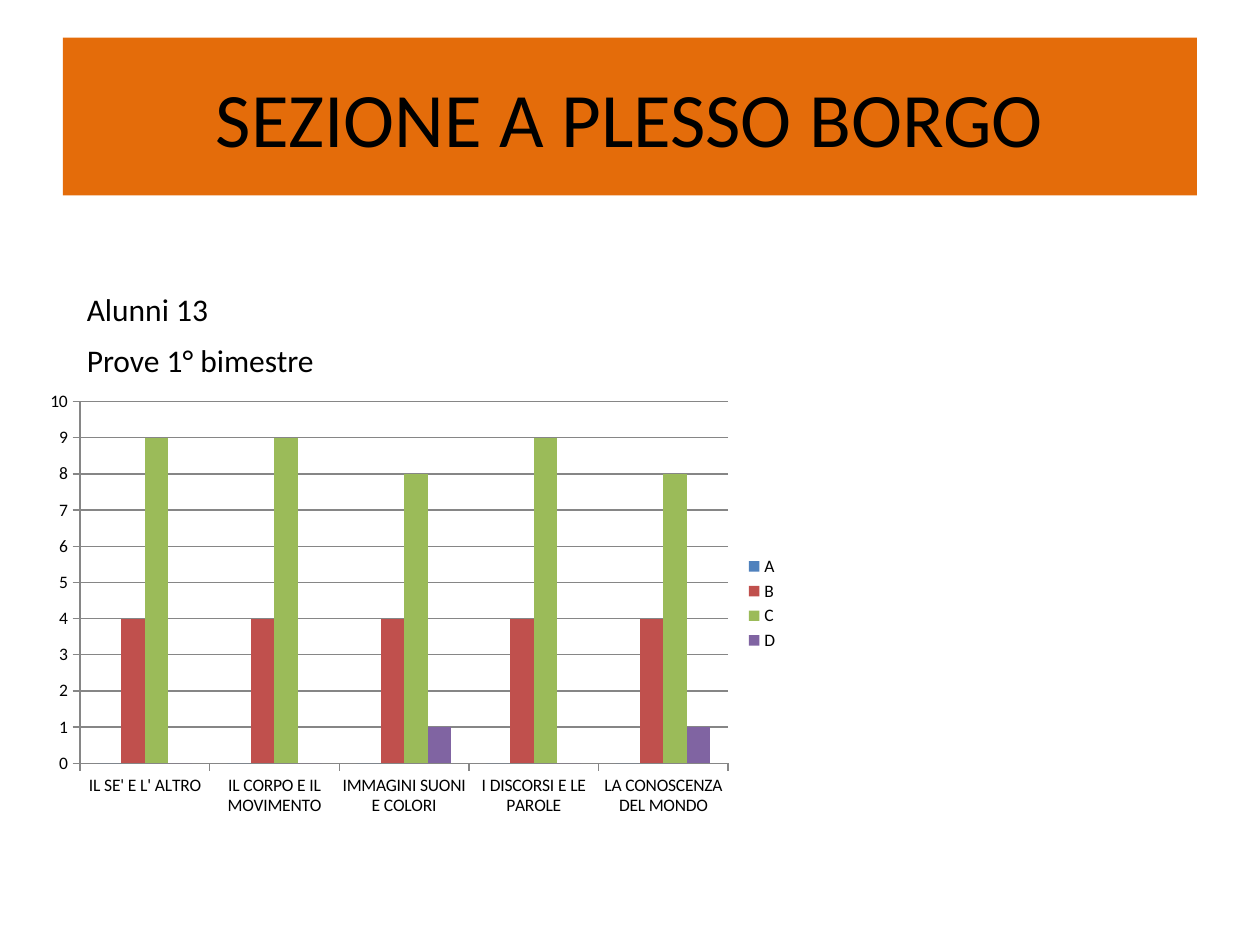
from pptx import Presentation
from pptx.chart.data import CategoryChartData
from pptx.dml.color import RGBColor
from pptx.enum.chart import XL_CHART_TYPE as CT, XL_LEGEND_POSITION as LP, XL_TICK_MARK as TM
from pptx.enum.shapes import MSO_SHAPE as MS
from pptx.enum.text import MSO_ANCHOR as MA, MSO_AUTO_SIZE as AS, PP_ALIGN as PA
from pptx.util import Cm, Pt


def rgb(value):
    return RGBColor.from_string(value)


def style(font, size):
    for name, value in {"name": "Calibri", "size": Pt(size), "bold": False}.items():
        setattr(font, name, value)
    font.color.rgb = rgb("000000")


prs = Presentation()
prs.slide_width, prs.slide_height = Cm(25.4), Cm(19.05)
s = prs.slides.add_slide(prs.slide_layouts[6])

# Title band
sp = s.shapes.add_shape(MS.RECTANGLE, Cm(1.27), Cm(0.76), Cm(22.86), Cm(3.18))
sp.shadow.inherit = False
sp.fill.solid()
sp.fill.fore_color.rgb = rgb("E46C0A")
sp.line.fill.background()
tf = sp.text_frame
tf.vertical_anchor = MA.MIDDLE
p = tf.paragraphs[0]
p.alignment = PA.CENTER
r = p.add_run()
r.text = "SEZIONE A PLESSO BORGO"
style(r.font, 44)

# Results by field of experience
data = CategoryChartData(number_format="General")
data.categories = ["IL SE' E L' ALTRO", "IL CORPO E IL MOVIMENTO", "IMMAGINI SUONI E COLORI",
                   "I DISCORSI E LE PAROLE", "LA CONOSCENZA DEL MONDO"]
levels = [
    ("A", [0, 0, 0, 0, 0], "4F81BD"),
    ("B", [4, 4, 4, 4, 4], "C0504D"),
    ("C", [9, 9, 8, 9, 8], "9BBB59"),
    ("D", [0, 0, 1, 0, 1], "8064A2"),
]
for name, values, _ in levels:
    data.add_series(name, values)
chart = s.shapes.add_chart(CT.COLUMN_CLUSTERED, Cm(0.71), Cm(7.72), Cm(15.24), Cm(8.89), data).chart
style(chart.font, 10)
chart.has_title = False
chart.has_legend = True
chart.legend.position = LP.RIGHT
chart.legend.include_in_layout = False

plot = chart.plots[0]
for name, value in {"gap_width": 150, "overlap": 0, "vary_by_categories": False}.items():
    setattr(plot, name, value)
for series, (_, _, color) in zip(plot.series, levels):
    series.format.fill.solid()
    series.format.fill.fore_color.rgb = rgb(color)

axis = chart.value_axis
for name, value in {"minimum_scale": 0, "maximum_scale": 10, "major_unit": 1,
                    "has_major_gridlines": True}.items():
    setattr(axis, name, value)
for ax in (chart.category_axis, axis):
    ax.major_tick_mark = TM.OUTSIDE
    ax.minor_tick_mark = TM.NONE
for fmt in (chart.category_axis.format, axis.format, axis.major_gridlines.format):
    fmt.line.color.rgb = rgb("868686")
    fmt.line.width = Pt(0.75)

# Captions above the chart
for text, top, width in [("Alunni 13", 5.72, 3), ("Prove 1° bimestre", 6.76, 5.13)]:
    tf = s.shapes.add_textbox(Cm(1.5), Cm(top), Cm(width), Cm(1.02)).text_frame
    tf.word_wrap = False
    tf.auto_size = AS.SHAPE_TO_FIT_TEXT
    r = tf.paragraphs[0].add_run()
    r.text = text
    style(r.font, 18)

prs.save("out.pptx")
